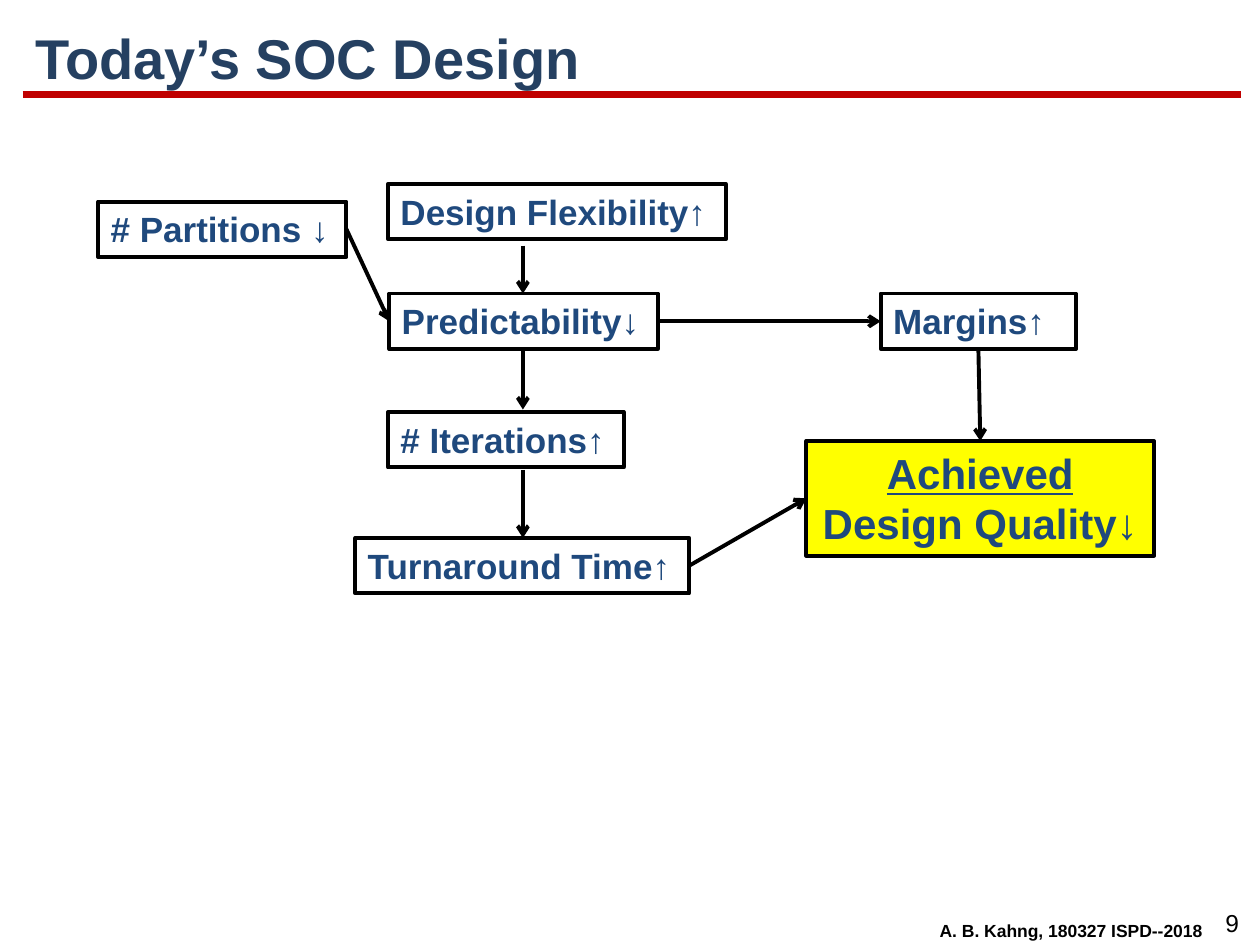
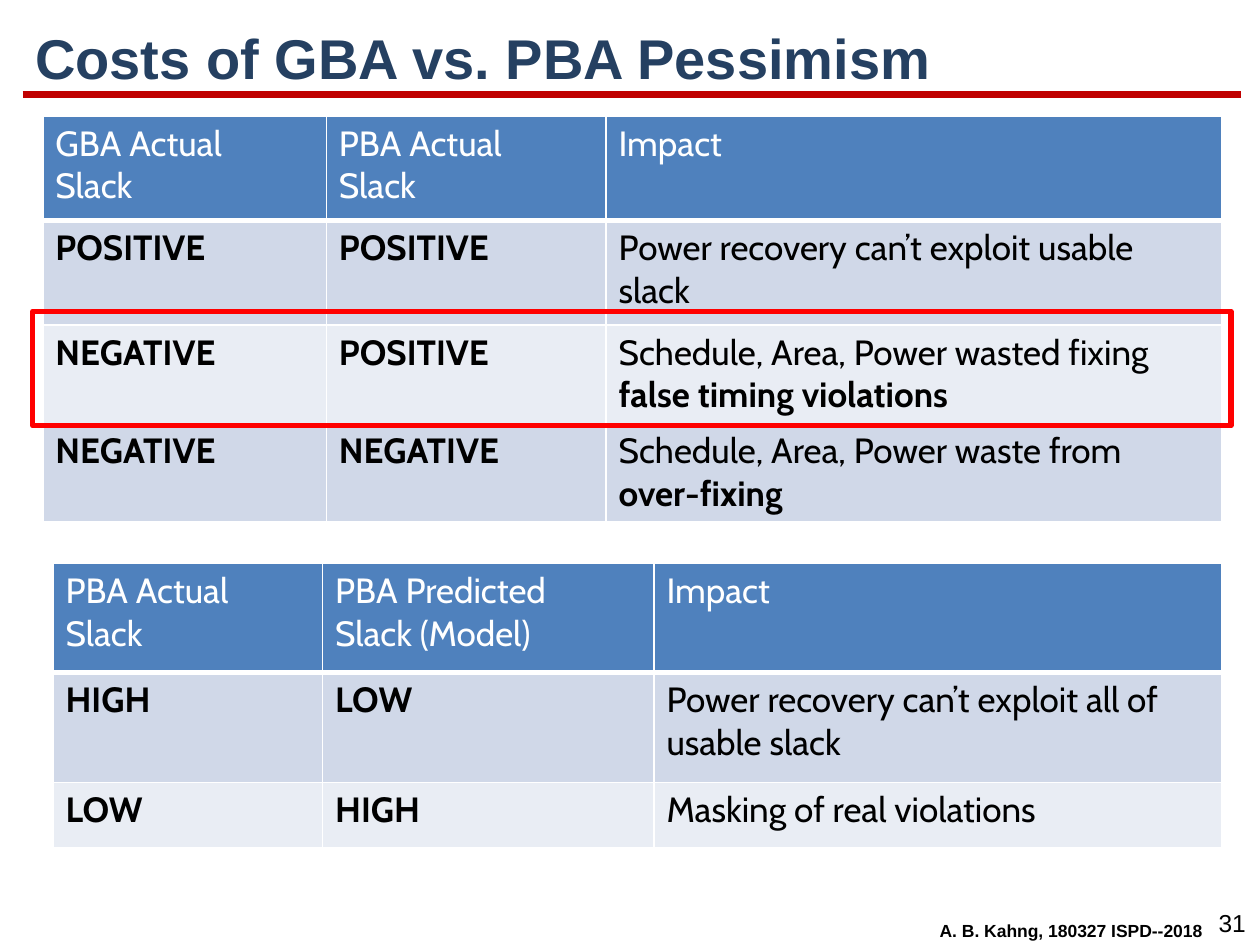
from lxml import etree
from pptx import Presentation
from pptx.dml.color import RGBColor
from pptx.enum.shapes import MSO_CONNECTOR as CONN, MSO_SHAPE as SHAPE
from pptx.enum.text import MSO_ANCHOR as ANCHOR, PP_ALIGN as ALIGN
from pptx.oxml.ns import qn
from pptx.util import Inches, Pt

COLORS = {
    "title": "254061", "rule": "C00000", "ink": "000000", "label": "1F497D",
    "goal": "FFFF00", "head": "4F81BD", "odd": "D0D8E8", "even": "E9EDF4",
    "white": "FFFFFF", "highlight": "FF0000",
}
FOOTER = "A. B. Kahng, 180327 ISPD--2018"

FLOW = {
    "title": "Today’s SOC Design",
    "number": "9",
    "boxes": {
        "# Partitions ↓": (0.78, 1.6, 1.97),
        "Margins↑": (6.99, 2.33, 1.55),
        "Predictability↓": (3.09, 2.33, 2.13),
        "Turnaround Time↑": (2.82, 4.27, 2.65),
        "# Iterations↑": (3.08, 3.27, 1.87),
        "Design Flexibility↑": (3.08, 1.46, 2.68),
    },
    "goal": ("Achieved", "Design Quality↓"),
    "goal_at": (6.4, 3.5, 2.76, 0.91),
    "spine_x": 4.15,
    "spine": [(1.95, 2.33), (2.77, 3.25), (3.73, 4.27)],
    "sideways": [
        ("# Partitions ↓", "Predictability↓"),
        ("Predictability↓", "Margins↑"),
        ("Turnaround Time↑", "goal"),
    ],
}
BOX_H = 0.44

COSTS = {
    "title": "Costs of GBA vs. PBA Pessimism",
    "number": "31",
    "tables": [
        {
            "at": (0.34, 0.92),
            "cols": (2.25, 2.22, 4.89),
            "heights": (0.83, 0.83, 0.78, 0.78),
            "rows": [
                ("GBA Actual\nSlack", "PBA Actual\nSlack", "Impact"),
                ("POSITIVE", "POSITIVE", "Power recovery can’t exploit usable\nslack"),
                ("NEGATIVE", "POSITIVE",
                 "Schedule, Area, Power wasted fixing\n*false timing violations"),
                ("NEGATIVE", "NEGATIVE",
                 "Schedule, Area, Power waste from\n*over-fixing"),
            ],
        },
        {
            "at": (0.42, 4.47),
            "cols": (2.14, 2.63, 4.51),
            "heights": (0.87, 0.87, 0.52),
            "rows": [
                ("PBA Actual\nSlack", "PBA Predicted\nSlack (Model)", "Impact"),
                ("HIGH", "LOW", "Power recovery can’t exploit all of\nusable slack"),
                ("LOW", "HIGH", "Masking of real violations"),
            ],
        },
    ],
    "highlight": (0.26, 2.47, 9.51, 0.91),
}


def rgb(name):
    return RGBColor.from_string(COLORS[name])


def add_run(p, text, size, color, bold=False, font="Arial"):
    r = p.add_run()
    r.text = text
    r.font.name, r.font.size, r.font.bold = font, Pt(size), bold
    r.font.color.rgb = rgb(color)
    return r


def add_text(slide, at, text, size, color, bold=True, align=ALIGN.CENTER):
    tf = slide.shapes.add_textbox(*map(Inches, at)).text_frame
    tf.word_wrap = True
    p = tf.paragraphs[0]
    p.alignment = align
    add_run(p, text, size, color, bold)
    return tf


def add_line(slide, start, end, color, width, arrow=False):
    sp = slide.shapes.add_connector(CONN.STRAIGHT, *map(Inches, start + end))
    sp.line.color.rgb = rgb(color)
    sp.line.width = Pt(width)
    if arrow:
        etree.SubElement(sp.line._get_or_add_ln(), qn("a:tailEnd"), type="arrow")
    etree.SubElement(sp._element.spPr, qn("a:effectLst"))


def add_box(slide, at, line, width, fill=None):
    sp = slide.shapes.add_shape(SHAPE.RECTANGLE, *map(Inches, at))
    sp.shadow.inherit = False
    if fill:
        sp.fill.solid()
        sp.fill.fore_color.rgb = rgb(fill)
    else:
        sp.fill.background()
    sp.line.color.rgb = rgb(line)
    sp.line.width = Pt(width)
    return sp


def add_label(slide, at, lines, size, align, fill=None):
    tf = add_box(slide, at, "ink", 2.25, fill).text_frame
    tf.word_wrap = True
    tf.vertical_anchor = ANCHOR.TOP
    for i, line in enumerate(lines):
        p = tf.add_paragraph() if i else tf.paragraphs[0]
        p.alignment = align
        r = add_run(p, line, size, "label", True)
        r.font.underline = len(lines) > 1 and i == 0


def new_slide(prs, content):
    slide = prs.slides.add_slide(prs.slide_layouts[6])
    add_line(slide, (0.18, 0.75), (9.85, 0.75), "rule", 4.5)
    add_text(slide, (9.56, 7.16, 0.44, 0.34), content["number"], 14, "ink",
             False).word_wrap = False
    add_text(slide, (7.35, 7.25, 2.3, 0.27), FOOTER, 10, "ink")
    tf = add_text(slide, (0.18, 0.16, 9.68, 0.65), content["title"], 32, "title",
                  align=ALIGN.LEFT)
    tf.vertical_anchor = ANCHOR.MIDDLE
    tf.paragraphs[0].line_spacing = 0.9
    return slide


def set_borders(cell, bottom):
    tc_pr = cell._tc.get_or_add_tcPr()
    for side, width in (("L", 1), ("R", 1), ("T", 1), ("B", bottom)):
        ln = etree.SubElement(tc_pr, qn("a:ln" + side), w=str(Pt(width)))
        fill = etree.SubElement(ln, qn("a:solidFill"))
        etree.SubElement(fill, qn("a:srgbClr"), val=COLORS["white"])


def add_slack_table(slide, data):
    rows, cols, heights = data["rows"], data["cols"], data["heights"]
    size = (sum(cols), sum(heights))
    table = slide.shapes.add_table(
        len(rows), len(cols), *map(Inches, data["at"] + size)).table
    for col, width in zip(table.columns, cols):
        col.width = Inches(width)
    for i, texts in enumerate(rows):
        table.rows[i].height = Inches(heights[i])
        band = "head" if i == 0 else "odd" if i % 2 else "even"
        for j, text in enumerate(texts):
            cell = table.cell(i, j)
            set_borders(cell, 1 if i else 3)
            cell.fill.solid()
            cell.fill.fore_color.rgb = rgb(band)
            tf = cell.text_frame
            for n, line in enumerate(text.split("\n")):
                p = tf.add_paragraph() if n else tf.paragraphs[0]
                bold = i > 0 and (j < 2 or line.startswith("*"))
                add_run(p, line.lstrip("*"), 20, "ink" if i else "white", bold, "Cabin")


def build_flow(prs):
    slide = new_slide(prs, FLOW)
    places = {name: at + (BOX_H,) for name, at in FLOW["boxes"].items()}
    for name, at in places.items():
        add_label(slide, at, [name], 20, ALIGN.LEFT)
    places["goal"] = FLOW["goal_at"]
    add_label(slide, places["goal"], FLOW["goal"], 24, ALIGN.CENTER, "goal")

    x = FLOW["spine_x"]
    arrows = [((x, top), (x, bottom)) for top, bottom in FLOW["spine"]]
    for source, target in FLOW["sideways"]:
        sx, sy, sw, sh = places[source]
        tx, ty, _, th = places[target]
        arrows.append(((sx + sw, sy + sh / 2), (tx, ty + th / 2)))
    mx, my, mw, mh = places["Margins↑"]
    gx, gy, gw, _ = places["goal"]
    arrows.append(((mx + mw / 2, my + mh), (gx + gw / 2, gy)))
    for start, end in arrows:
        add_line(slide, start, end, "ink", 2.25, arrow=True)


def build_costs(prs):
    slide = new_slide(prs, COSTS)
    for data in COSTS["tables"]:
        add_slack_table(slide, data)
    add_box(slide, COSTS["highlight"], "highlight", 3)


def main():
    prs = Presentation()
    prs.slide_width, prs.slide_height = Inches(10), Inches(7.5)
    build_flow(prs)
    build_costs(prs)
    prs.save("out.pptx")


if __name__ == "__main__":
    main()
